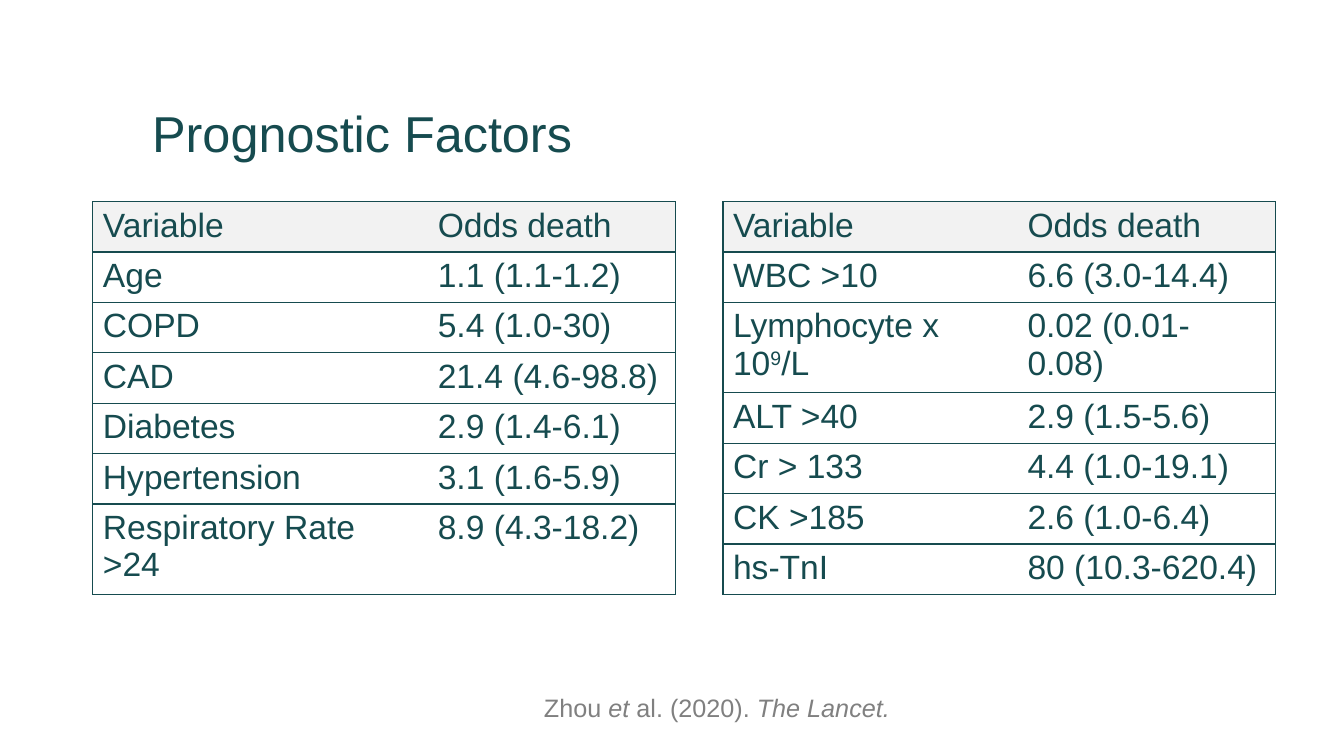
from lxml import etree
from pptx import Presentation
from pptx.dml.color import RGBColor
from pptx.enum.text import MSO_ANCHOR, MSO_AUTO_SIZE
from pptx.oxml.ns import qn
from pptx.util import Cm, Pt

BOTTOM, TOP = MSO_ANCHOR.BOTTOM, MSO_ANCHOR.TOP
FIT_SHAPE, NO_FIT = MSO_AUTO_SIZE.SHAPE_TO_FIT_TEXT, MSO_AUTO_SIZE.NONE
TEAL = RGBColor(0x16, 0x4B, 0x4F)
GRAY = RGBColor(0x80, 0x80, 0x80)
HEADER_FILL = RGBColor(0xF2, 0xF2, 0xF2)

# Content: a cell is a string, or a list of (text, format) runs
TITLE = "Prognostic Factors"
HEADER = ("Variable", "Odds death")
TABLES = [
    {"left": 2.34, "columns": (8.44, 6.25), "tall_row": 6, "rows": [
        HEADER,
        ("Age", "1.1 (1.1-1.2)"),
        ("COPD", "5.4 (1.0-30)"),
        ("CAD", "21.4 (4.6-98.8)"),
        ("Diabetes", "2.9 (1.4-6.1)"),
        ("Hypertension", "3.1 (1.6-5.9)"),
        ("Respiratory Rate >24", "8.9 (4.3-18.2)"),
    ]},
    {"left": 18.22, "columns": (7.42, 6.5), "tall_row": 2, "rows": [
        HEADER,
        ("WBC >10", "6.6 (3.0-14.4)"),
        ([("Lymphocyte x 10", {}), ("9", {"baseline": "30000"}), ("/L", {})],
         "0.02 (0.01-0.08)"),
        ("ALT >40", "2.9 (1.5-5.6)"),
        ("Cr > 133", "4.4 (1.0-19.1)"),
        ("CK >185", "2.6 (1.0-6.4)"),
        ("hs-TnI", "80 (10.3-620.4)"),
    ]},
]
CITATION = [("Zhou ", {}), ("et ", {"i": "1"}), ("al. (2020). ", {}),
            ("The Lancet.", {"i": "1"})]

# Measures in centimetres
TABLE_TOP, ROW_HEIGHT, TALL_HEIGHT = 5.08, 1.27, 2.28
PLAIN_STYLE = "{2D5ABB26-0587-4C30-8999-92F81FD0307C}"


def write_runs(paragraph, content, size, color):
    runs = [(content, {})] if isinstance(content, str) else content
    for text, extra in runs:
        run = paragraph.add_run()
        run.text = text
        for name, value in {"name": "Arial", "size": Pt(size)}.items():
            setattr(run.font, name, value)
        run.font.color.rgb = color
        properties = run._r.get_or_add_rPr()
        for name, value in extra.items():
            properties.set(name, value)


def add_borders(cell, sides):
    properties = cell._tc.get_or_add_tcPr()
    for side in sides:
        line = etree.SubElement(properties, qn(f"a:ln{side}"), w=str(Pt(1)))
        fill = etree.SubElement(line, qn("a:solidFill"))
        etree.SubElement(fill, qn("a:srgbClr"), val=str(TEAL))


def add_odds_table(slide, data):
    rows, widths = data["rows"], data["columns"]
    heights = [TALL_HEIGHT if index == data["tall_row"] else ROW_HEIGHT
               for index in range(len(rows))]
    table = slide.shapes.add_table(
        len(rows), len(widths), Cm(data["left"]), Cm(TABLE_TOP),
        Cm(sum(widths)), Cm(sum(heights))).table
    table.first_row = table.horz_banding = False
    table._tbl.tblPr.find(qn("a:tableStyleId")).text = PLAIN_STYLE
    for column, width in zip(table.columns, widths):
        column.width = Cm(width)
    for row_index, (row, height) in enumerate(zip(rows, heights)):
        table.rows[row_index].height = Cm(height)
        for column_index, content in enumerate(row):
            cell = table.cell(row_index, column_index)
            write_runs(cell.text_frame.paragraphs[0], content, 24, TEAL)
            # Outer sides and row rules only, no rule between the columns
            add_borders(cell, ("L" if column_index == 0 else "R", "T", "B"))
            if row_index == 0:
                cell.fill.solid()
                cell.fill.fore_color.rgb = HEADER_FILL
            else:
                cell.fill.background()


def main():
    presentation = Presentation()
    presentation.slide_width, presentation.slide_height = Cm(33.87), Cm(19.05)
    slide = presentation.slides.add_slide(presentation.slide_layouts[5])

    # Title
    title = slide.shapes.title
    title.left, title.top = Cm(3.58), Cm(1.07)
    title.width, title.height = Cm(26.67), Cm(3.18)
    for name, value in {"vertical_anchor": BOTTOM, "word_wrap": True,
                        "auto_size": NO_FIT}.items():
        setattr(title.text_frame, name, value)
    paragraph = title.text_frame.paragraphs[0]
    paragraph.line_spacing = 0.9
    write_runs(paragraph, TITLE, 36, TEAL)
    paragraph._p.get_or_add_pPr().set("algn", "l")

    # Odds tables
    for data in TABLES:
        add_odds_table(slide, data)

    # Citation
    citation = slide.shapes.add_textbox(Cm(13.46), Cm(17.32), Cm(9.32), Cm(1.02))
    for name, value in {"vertical_anchor": TOP, "word_wrap": False,
                        "auto_size": FIT_SHAPE}.items():
        setattr(citation.text_frame, name, value)
    write_runs(citation.text_frame.paragraphs[0], CITATION, 18, GRAY)

    presentation.save("out.pptx")


if __name__ == "__main__":
    main()
